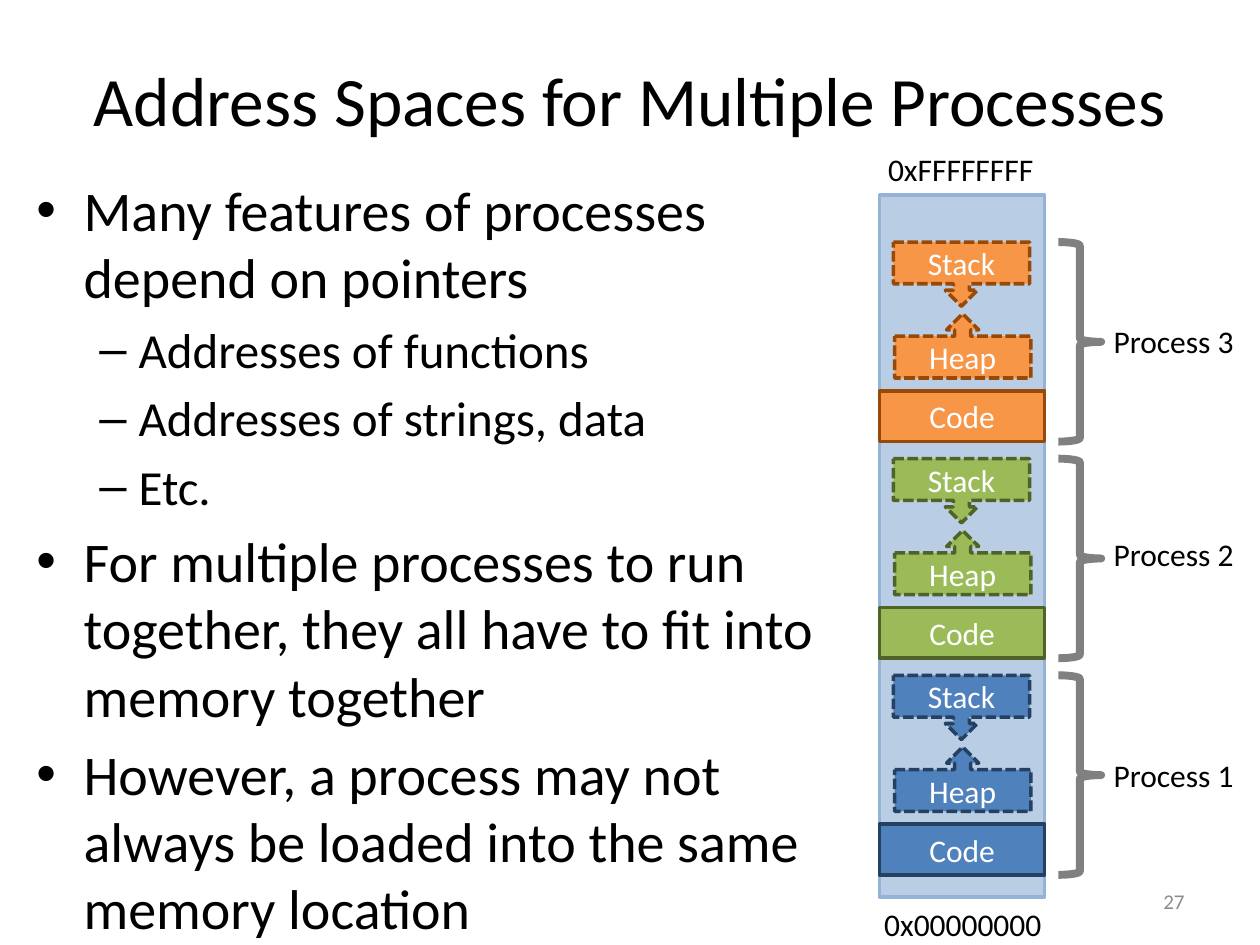
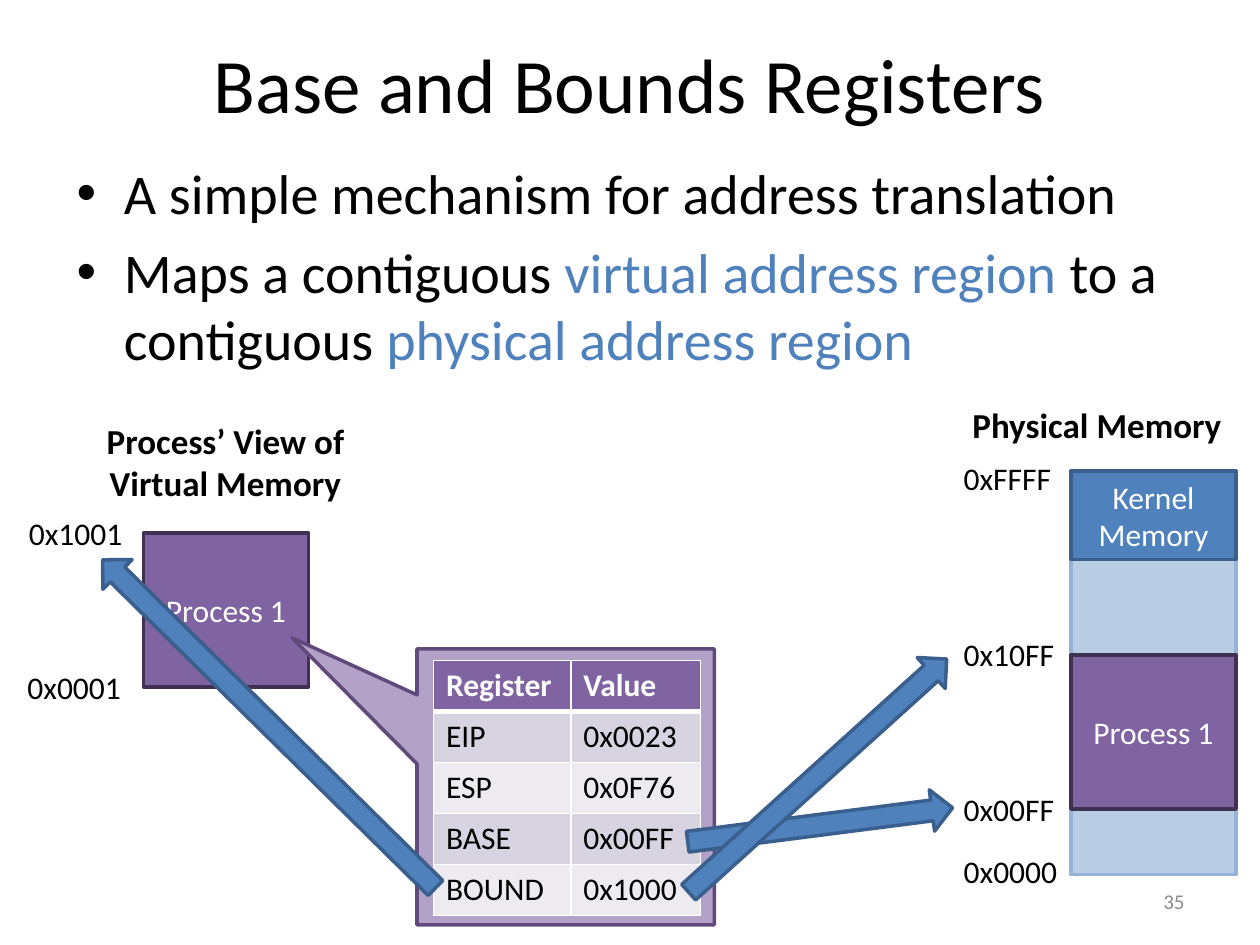
"""Builds two slides on process address spaces and base and bounds registers."""
from lxml import etree
from pptx import Presentation
from pptx.dml.color import RGBColor
from pptx.enum.dml import MSO_LINE
from pptx.enum.shapes import MSO_SHAPE
from pptx.enum.text import MSO_ANCHOR, MSO_AUTO_SIZE, PP_ALIGN
from pptx.oxml.ns import qn
from pptx.util import Pt

RECT, ARROW, BRACE = MSO_SHAPE.RECTANGLE, MSO_SHAPE.RIGHT_ARROW, MSO_SHAPE.LEFT_BRACE
STACK, HEAP = MSO_SHAPE.DOWN_ARROW_CALLOUT, MSO_SHAPE.UP_ARROW_CALLOUT
CALLOUT = MSO_SHAPE.RECTANGULAR_CALLOUT
LEFT, CENTER, RIGHT = PP_ALIGN.LEFT, PP_ALIGN.CENTER, PP_ALIGN.RIGHT
TOP, MIDDLE = MSO_ANCHOR.TOP, MSO_ANCHOR.MIDDLE
FIT, DASH = MSO_AUTO_SIZE.SHAPE_TO_FIT_TEXT, MSO_LINE.SQUARE_DOT

FONT = "Calibri"
COLORS = {
    "black": "000000", "white": "FFFFFF", "number": "8C8C8C", "brace": "808080",
    "memory": "B9CDE5", "memory line": "95B3D7",
    "orange": "F79646", "orange line": "984807",
    "green": "9BBB59", "green line": "4F6228",
    "blue": "4F81BD", "blue line": "254061", "kernel line": "3A5F8C",
    "purple": "8064A2", "purple line": "403152",
    "callout": "B3A2C7", "callout line": "604A7B",
    "odd row": "D8D3E0", "even row": "EDEAF0",
}
BULLETS = [("•", 27, 27, 32), ("–", 58.5, 22.5, 28)]

SPACES = {
    "title": ("Address Spaces for Multiple Processes", 11.5, 39.6),
    "number": "27",
    "body_box": (13.7, 96.5, 482.4, 440.6),
    "body": [
        (0, [("Many features of processes depend on pointers", "black")]),
        (1, [("Addresses of functions", "black")]),
        (1, [("Addresses of strings, data", "black")]),
        (1, [("Etc.", "black")]),
        (0, [("For multiple processes to run together, they all have to fit into "
              "memory together", "black")]),
        (0, [("However, a process may not always be loaded into the same memory "
              "location", "black")]),
    ],
    "memory_box": (502.6, 111.6, 94.3, 401),
    "addresses": [("0xFFFFFFFF", 500.4, 82.1, 97.9), ("0x00000000", 498.2, 513.4, 105.1)],
}
PROCESSES = [("Process 3", "orange", 180.7), ("Process 2", "green", 302.4),
             ("Process 1", "blue", 428.4)]
FIRST_PROCESS_TOP, PROCESS_STEP = 138.3, 123.8

REGISTERS = {
    "title": ("Base and Bounds Registers", 2.2, 44),
    "number": "35",
    "body_box": (36.7, 87.1, 648, 136),
    "body": [
        (0, [("A simple mechanism for address translation", "black")]),
        (0, [("Maps a contiguous ", "black"), ("virtual address region ", "blue"),
             ("to a contiguous ", "black"), ("physical address region", "blue")]),
    ],
    "memory_box": (612, 269.3, 94.3, 230.4),
    "addresses": [
        ("0x0000", 543.6, 483.1, 68.4), ("0xFFFF", 543.6, 258.5, 64.8),
        ("0x00FF", 543.6, 447.8, 67), ("0x10FF", 543.6, 359.3, 67),
        ("0x0001", 8.6, 378, 68.4), ("0x1001", 9.4, 290.2, 68.4),
    ],
}
REGIONS = [("Kernel Memory", "blue", "kernel line", (612, 269.3, 94.3, 50.4)),
           ("Process 1", "purple", "purple line", (612, 374.4, 94.3, 88)),
           ("Process 1", "purple", "purple line", (82, 304.6, 94.3, 88))]
HEADINGS = [("Physical Memory", (548.6, 226.8, 158.4, 31.7), LEFT),
            ("Process’ View of\nVirtual Memory", (53.3, 236.2, 151.2, 55.4), CENTER)]
REGISTER_ROWS = [("Register", "Value"), ("EIP", "0x0023"), ("ESP", "0x0F76"),
                 ("BASE", "0x00FF"), ("BOUND", "0x1000")]
COLUMN_WIDTHS, ROW_HEIGHT = (78.5, 74.2), 29.2
ARROWS = [(392.4, 459.4, 152.6, 352.7), (20.2, 401.8, 267.1, 224.6),
          (367.9, 431.3, 198.7, 317.9)]
ARROW_HEIGHT = 23.8


def rgb(name):
    return RGBColor.from_string(COLORS[name])


def points(box):
    return [Pt(length) for length in box]


def style_text(frame, color, size, align=LEFT, bold=False):
    for paragraph in frame.paragraphs:
        paragraph.alignment = align
        for run in paragraph.runs:
            run.font.name, run.font.size, run.font.bold = FONT, Pt(size), bold
            run.font.color.rgb = rgb(color)


def add_text(slide, text, box, size=18, color="black", align=LEFT, bold=False, anchor=TOP):
    frame = slide.shapes.add_textbox(*points(box)).text_frame
    frame.text = text
    frame.vertical_anchor = anchor
    frame.word_wrap = anchor == MIDDLE
    if anchor == TOP:
        frame.auto_size = FIT
    style_text(frame, color, size, align, bold)


def add_block(slide, kind, box, fill, line, text="", width=2, dash=None, rotation=0):
    block = slide.shapes.add_shape(kind, *points(box))
    block.shadow.inherit = False
    block.rotation = rotation
    if fill:
        block.fill.solid()
        block.fill.fore_color.rgb = rgb(fill)
    else:
        block.fill.background()
    block.line.color.rgb = rgb(line)
    block.line.width = Pt(width)
    if dash:
        block.line.dash_style = dash
    if text:
        block.text_frame.text = text
        block.text_frame.vertical_anchor = MIDDLE
        style_text(block.text_frame, "white", 18, CENTER)
    return block


def add_body(slide, box, items):
    frame = slide.shapes.add_textbox(*points(box)).text_frame
    frame.word_wrap = True
    for index, (level, pieces) in enumerate(items):
        paragraph = frame.add_paragraph() if index else frame.paragraphs[0]
        mark, margin, hanging, size = BULLETS[level]
        paragraph.level = level
        paragraph.space_before = Pt(size * 0.2)
        for text, color in pieces:
            run = paragraph.add_run()
            run.text = text
            run.font.name, run.font.size = FONT, Pt(size)
            run.font.color.rgb = rgb(color)
        properties = paragraph._p.get_or_add_pPr()
        properties.set("marL", str(Pt(margin)))
        properties.set("indent", str(-Pt(hanging)))
        etree.SubElement(properties, qn("a:buFont"), typeface="Arial")
        etree.SubElement(properties, qn("a:buChar"), char=mark)


def add_slide(deck, content):
    slide = deck.slides.add_slide(deck.slide_layouts[5])
    text, top, size = content["title"]
    title = slide.shapes.title
    title.left, title.top, title.width, title.height = points((36, top, 648, 90))
    title.text_frame.text = text
    title.text_frame.vertical_anchor = MIDDLE
    style_text(title.text_frame, "black", size, CENTER)
    add_body(slide, content["body_box"], content["body"])
    add_text(slide, content["number"], (516, 500.5, 168, 28.8), 12, "number", RIGHT,
             anchor=MIDDLE)
    add_block(slide, RECT, content["memory_box"], "memory", "memory line")
    for address, left, top, width in content["addresses"]:
        add_text(slide, address, (left, top, width, 29))
    return slide


def add_process(slide, top, name, color, label_top):
    line = color + " line"
    add_block(slide, RECT, (502.6, top + 85, 94.3, 29), color, line, "Code")
    add_block(slide, HEAP, (511.2, top + 41, 77.8, 36.7), color, line, "Heap", dash=DASH)
    add_block(slide, STACK, (510.5, top, 77.8, 36.7), color, line, "Stack", dash=DASH)
    add_block(slide, BRACE, (604.8, top, 24.5, 114), None, "brace", width=4.5, rotation=180)
    add_text(slide, name, (629.3, label_top, 83.5, 29))


def add_borders(cell, bottom):
    properties = cell._tc.get_or_add_tcPr()
    for side, width in (("L", 1), ("R", 1), ("T", 1), ("B", bottom)):
        border = etree.SubElement(properties, qn("a:ln" + side), w=str(Pt(width)))
        fill = etree.SubElement(border, qn("a:solidFill"))
        etree.SubElement(fill, qn("a:srgbClr"), val=COLORS["white"])


def add_registers(slide):
    box = (247.7, 377.3, sum(COLUMN_WIDTHS), ROW_HEIGHT * len(REGISTER_ROWS))
    table = slide.shapes.add_table(len(REGISTER_ROWS), len(COLUMN_WIDTHS), *points(box)).table
    for column, width in zip(table.columns, COLUMN_WIDTHS):
        column.width = Pt(width)
    for r, values in enumerate(REGISTER_ROWS):
        table.rows[r].height = Pt(ROW_HEIGHT)
        header = r == 0
        fill = "purple" if header else "odd row" if r % 2 else "even row"
        for c, value in enumerate(values):
            cell = table.cell(r, c)
            cell.text_frame.text = value
            style_text(cell.text_frame, "white" if header else "black", 18, bold=header)
            add_borders(cell, 3 if header else 1)
            cell.fill.solid()
            cell.fill.fore_color.rgb = rgb(fill)


def main():
    deck = Presentation()
    deck.slide_width, deck.slide_height = Pt(720), Pt(540)

    spaces = add_slide(deck, SPACES)
    for index, process in enumerate(PROCESSES):
        add_process(spaces, FIRST_PROCESS_TOP + index * PROCESS_STEP, *process)

    registers = add_slide(deck, REGISTERS)
    for name, fill, line, box in REGIONS:
        add_block(registers, RECT, box, fill, line, name)
    for heading, box, align in HEADINGS:
        add_text(registers, heading, box, 20, align=align, bold=True)
    callout = add_block(registers, CALLOUT, (238.3, 370.8, 169.9, 157.7),
                        "callout", "callout line")
    callout.adjustments[0], callout.adjustments[1] = -0.92, -0.54
    add_registers(registers)
    for left, top, length, angle in ARROWS:
        add_block(registers, ARROW, (left, top, length, ARROW_HEIGHT), "blue",
                  "kernel line", rotation=angle)

    deck.save("out.pptx")


if __name__ == "__main__":
    main()
